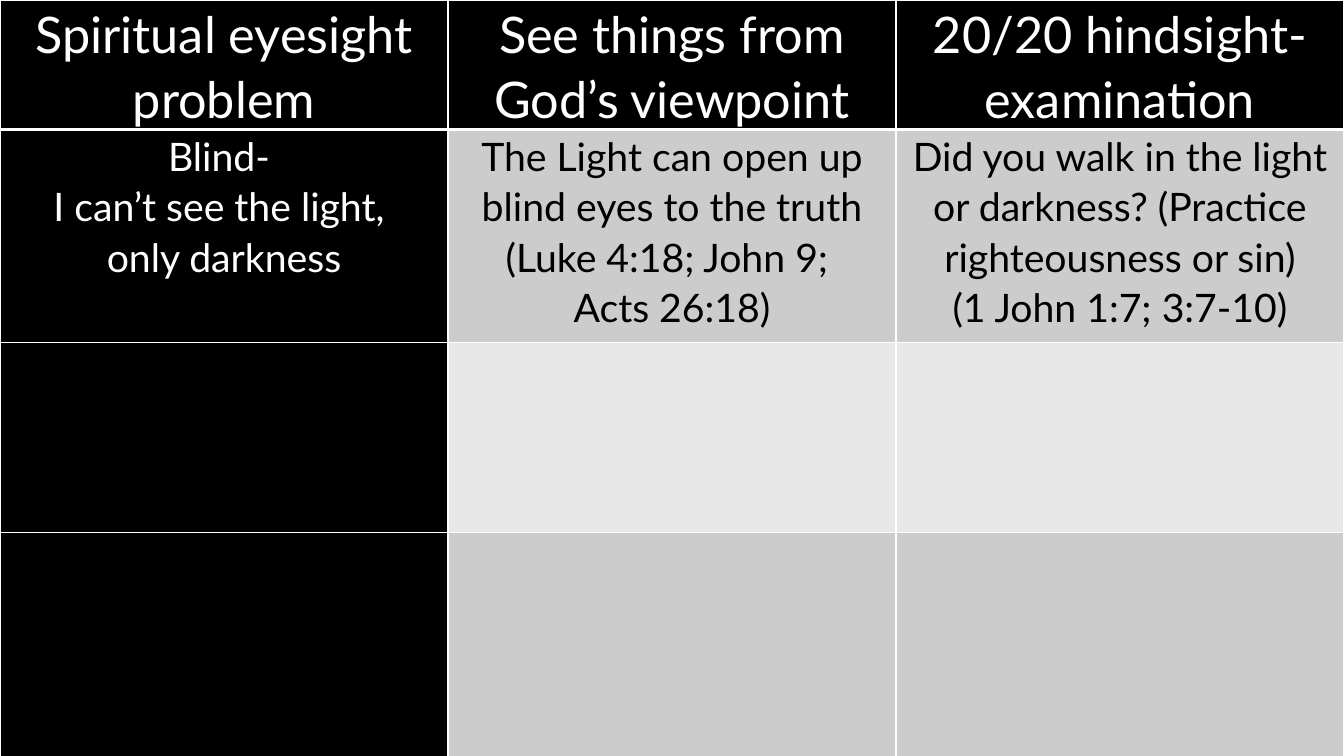
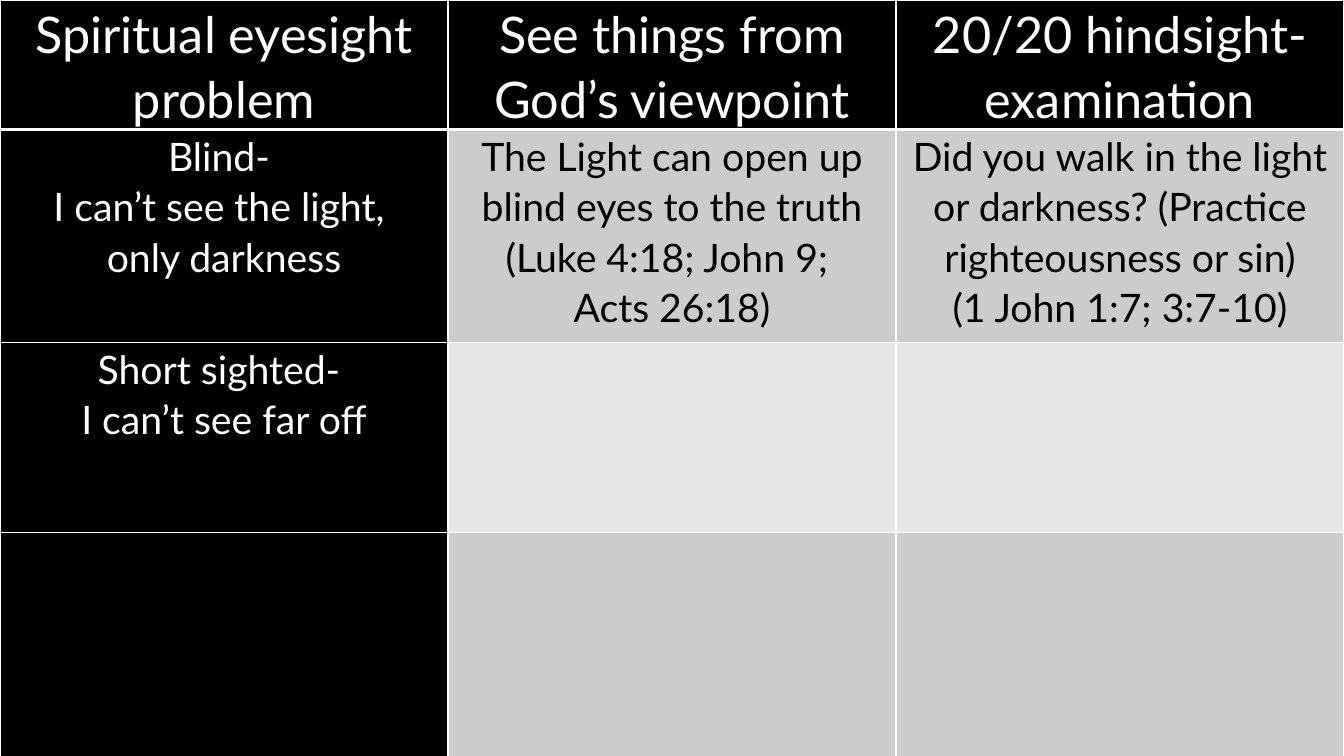
"""Build two slides that fill in a table on spiritual eyesight step by step."""
from lxml import etree
from pptx import Presentation
from pptx.dml.color import RGBColor
from pptx.enum.text import PP_ALIGN
from pptx.oxml.ns import qn
from pptx.util import Pt

CENTER = PP_ALIGN.CENTER
BLACK, WHITE, GREY, PALE = "000000", "FFFFFF", "CCCCCC", "E7E7E7"
FONT = "Lato"
BLANK_LAYOUT = 6
SLIDE_WIDTH, SLIDE_HEIGHT = 960, 540
COLUMN_COUNT = 3
ROW_HEIGHTS = [89.3, 152, 135.7, 163]
BAND_FILLS = [BLACK, GREY, PALE, GREY]
CELL_FORMAT = {"margin_left": Pt(5), "margin_right": Pt(5), "margin_top": 0, "margin_bottom": 0}
PARAGRAPH_FORMAT = {"alignment": CENTER, "line_spacing": 1.07}

HEADER = [
    ["Spiritual eyesight problem"],
    ["See things from God’s viewpoint"],
    ["20/20 hindsight- examination"],
]
BLIND = [
    ["Blind- ", "I can’t see the light, ", "only darkness"],
    ["The Light can open up blind eyes to the truth (Luke 4:18; John 9; ", "Acts 26:18)"],
    ["Did you walk in the light or darkness? (Practice righteousness or sin)", "(1 John 1:7; 3:7-10)"],
]
SHORT_SIGHTED = [["Short sighted- ", "I can’t see far off"], [], []]
EMPTY = [[], [], []]
SLIDES = [
    [HEADER, BLIND, EMPTY, EMPTY],
    [HEADER, BLIND, SHORT_SIGHTED, EMPTY],
]


def color(value):
    return RGBColor.from_string(value)


def add_borders(cell, widths):
    properties = cell._tc.get_or_add_tcPr()
    for index, (side, width) in enumerate(widths.items()):
        line = etree.Element(qn(f"a:{side}"), w=str(Pt(width)))
        fill = etree.SubElement(line, qn("a:solidFill"))
        etree.SubElement(fill, qn("a:srgbClr"), val=WHITE)
        properties.insert(index, line)


presentation = Presentation()
presentation.slide_width = Pt(SLIDE_WIDTH)
presentation.slide_height = Pt(SLIDE_HEIGHT)

for rows in SLIDES:
    slide = presentation.slides.add_slide(presentation.slide_layouts[BLANK_LAYOUT])
    slide.background.fill.solid()
    slide.background.fill.fore_color.rgb = color(BLACK)

    shape = slide.shapes.add_table(len(rows), COLUMN_COUNT, 0, 0, Pt(SLIDE_WIDTH), Pt(SLIDE_HEIGHT))
    table = shape.table
    table.first_row = False
    table.horz_banding = False
    for row, height in zip(table.rows, ROW_HEIGHTS):
        row.height = Pt(height)

    for row_index, row_texts in enumerate(rows):
        for column_index, lines in enumerate(row_texts):
            cell = table.cell(row_index, column_index)
            is_dark = row_index == 0 or column_index == 0
            for name, value in CELL_FORMAT.items():
                setattr(cell, name, value)
            cell.fill.solid()
            cell.fill.fore_color.rgb = color(BLACK if is_dark else BAND_FILLS[row_index])
            add_borders(cell, {
                "lnL": 1,
                "lnR": 1,
                "lnT": 3 if row_index == 1 else 1,
                "lnB": 3 if row_index == 0 else 1,
            })

            if not lines:
                continue
            cell.text = "\n".join(lines)
            for paragraph in cell.text_frame.paragraphs:
                for name, value in PARAGRAPH_FORMAT.items():
                    setattr(paragraph, name, value)
                font = paragraph.runs[0].font
                font.name = FONT
                font.size = Pt(36 if row_index == 0 else 28)
                font.color.rgb = color(WHITE if is_dark else BLACK)

presentation.save("out.pptx")
